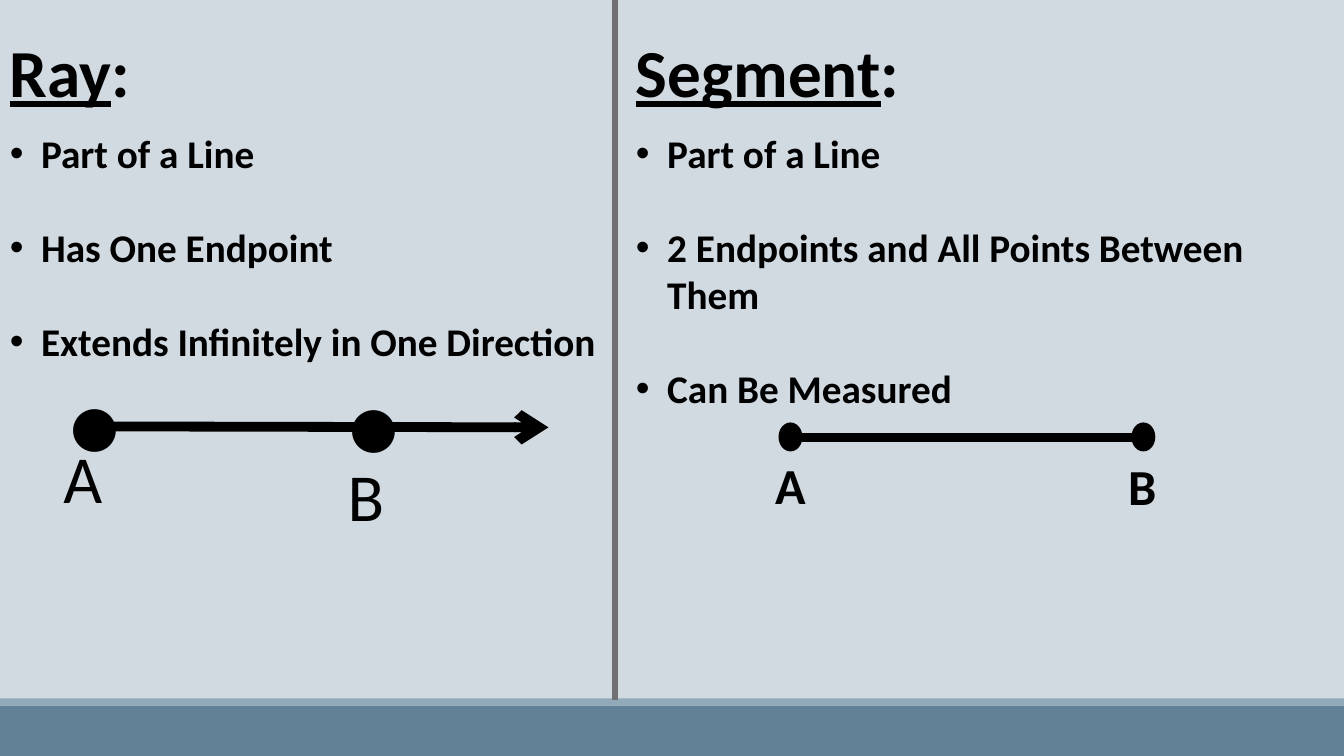
"""Build a geometry slide that contrasts a ray with a segment."""
from dataclasses import dataclass

import pptx
import pptx.dml.color
import pptx.enum.shapes
import pptx.oxml
import pptx.oxml.ns
import pptx.util
from pptx.util import Inches


@dataclass
class Panel:
    left: float
    width: float
    height: float
    heading: str
    points: list[str]


@dataclass
class Label:
    text: str
    left: float
    top: float
    width: float
    height: float
    size: int
    bold: bool = False
    font: str = "Calibri"


@dataclass
class Line:
    start: tuple[float, float]
    end: tuple[float, float]
    weight: float
    color: str = "000000"
    arrow: bool = False


@dataclass
class Block:
    kind: pptx.enum.shapes.MSO_SHAPE
    left: float
    top: float
    width: float
    height: float
    color: str
    outline: bool = False


RECTANGLE = pptx.enum.shapes.MSO_SHAPE.RECTANGLE
DOT = pptx.enum.shapes.MSO_SHAPE.FLOWCHART_CONNECTOR

BANDS = [
    Block(RECTANGLE, 0, 7, 13.33, 0.5, "618197"),
    Block(RECTANGLE, 0, 6.93, 13.33, 0.07, "92A9B9"),
]
PANELS = [
    Panel(0, 6.1, 4.59, "Ray",
          ["Part of a Line", "Has One Endpoint", "Extends Infinitely in One Direction"]),
    Panel(6.21, 7.13, 4.93, "Segment",
          ["Part of a Line", "2 Endpoints and All Points Between Them", "Can Be Measured"]),
]
ENDPOINTS = [Block(DOT, left, 4.2, 0.22, 0.27, "000000", True) for left in (7.73, 11.23)]
LINES = [
    Line((6.1, 0), (6.1, 6.94), 4.5, "6F6F74"),
    Line((0.83, 4.23), (5.44, 4.24), 7, arrow=True),
    Line((7.95, 4.34), (11.23, 4.34), 6),
]
LABELS = [
    Label("A", 7.59, 4.46, 0.51, 0.71, 36, True),
    Label("B", 11.09, 4.47, 0.48, 0.71, 36, True),
    Label("A", 0.53, 4.28, 0.44, 0.86, 48),
    Label("B", 3.35, 4.46, 0.48, 0.86, 48),
    Label("●", 3.37, 3.83, 0.43, 0.73, 40, font="Cabin"),
    Label("●", 0.6, 3.82, 0.43, 0.73, 40, font="Cabin"),
]


def paint(target, color: str) -> None:
    """Give a fill a solid colour."""
    target.solid()
    target.fore_color.rgb = pptx.dml.color.RGBColor.from_string(color)


def style(span, size: int, bold: bool, font: str = "Calibri") -> None:
    """Format one run in black."""
    span.font.size = pptx.util.Pt(size)
    span.font.bold = bold
    span.font.name = font
    paint(span.font.fill, "000000")


def add_child(parent, tag: str, **attributes: str):
    """Append a DrawingML element to its parent."""
    child = pptx.oxml.parse_xml(f"<a:{tag} {pptx.oxml.ns.nsdecls('a')}/>")
    for name, value in attributes.items():
        child.set(name, value)
    parent.append(child)


def draw_block(page, block: Block) -> None:
    """Draw a filled preset shape."""
    shape = page.shapes.add_shape(block.kind, Inches(block.left), Inches(block.top),
                                  Inches(block.width), Inches(block.height))
    shape.shadow.inherit = False
    paint(shape.fill, block.color)
    if block.outline:
        paint(shape.line.fill, block.color)
        shape.line.width = pptx.util.Pt(1.25)
    else:
        shape.line.fill.background()


def draw_line(page, line: Line) -> None:
    """Draw a straight line, with an arrowhead if asked."""
    connector = page.shapes.add_connector(
        pptx.enum.shapes.MSO_CONNECTOR.STRAIGHT,
        *map(Inches, line.start), *map(Inches, line.end))
    paint(connector.line.fill, line.color)
    connector.line.width = pptx.util.Pt(line.weight)
    if line.arrow:
        add_child(connector.line._get_or_add_ln(), "tailEnd", type="arrow")
    add_child(connector._element.spPr, "effectLst")


def draw_panel(page, panel: Panel) -> None:
    """Write an underlined heading above its bullet points."""
    box = page.shapes.add_textbox(Inches(panel.left), Inches(0.25),
                                  Inches(panel.width), Inches(panel.height))
    box.text_frame.word_wrap = True
    heading = box.text_frame.paragraphs[0]
    heading.space_after = pptx.util.Pt(13.4)
    for text, underline in ((panel.heading, True), (":", False)):
        span = heading.add_run()
        span.text = text
        style(span, 48, True)
        span.font.underline = underline
    for index, point in enumerate(panel.points):
        para = box.text_frame.add_paragraph()
        para.text = point
        style(para.runs[0], 28, True)
        if index:
            para.space_before = pptx.util.Pt(33.6)
        properties = para._p.get_or_add_pPr()
        properties.set("marL", str(Inches(0.31)))
        properties.set("indent", str(-Inches(0.31)))
        add_child(properties, "buFont", typeface="Arial")
        add_child(properties, "buChar", char="•")


def draw_label(page, label: Label) -> None:
    """Write a single unwrapped symbol."""
    box = page.shapes.add_textbox(Inches(label.left), Inches(label.top),
                                  Inches(label.width), Inches(label.height))
    box.text_frame.word_wrap = False
    box.text_frame.text = label.text
    style(box.text_frame.paragraphs[0].runs[0], label.size, label.bold, label.font)


def main() -> None:
    """Assemble and save the deck."""
    deck = pptx.Presentation()
    deck.slide_width = Inches(13.33)
    deck.slide_height = Inches(7.5)
    page = deck.slides.add_slide(deck.slide_layouts[6])
    paint(page.background.fill, "D1D9E1")
    for block in BANDS:
        draw_block(page, block)
    for panel in PANELS:
        draw_panel(page, panel)
    for block in ENDPOINTS:
        draw_block(page, block)
    for line in LINES:
        draw_line(page, line)
    for label in LABELS:
        draw_label(page, label)
    deck.save("out.pptx")


if __name__ == "__main__":
    main()
